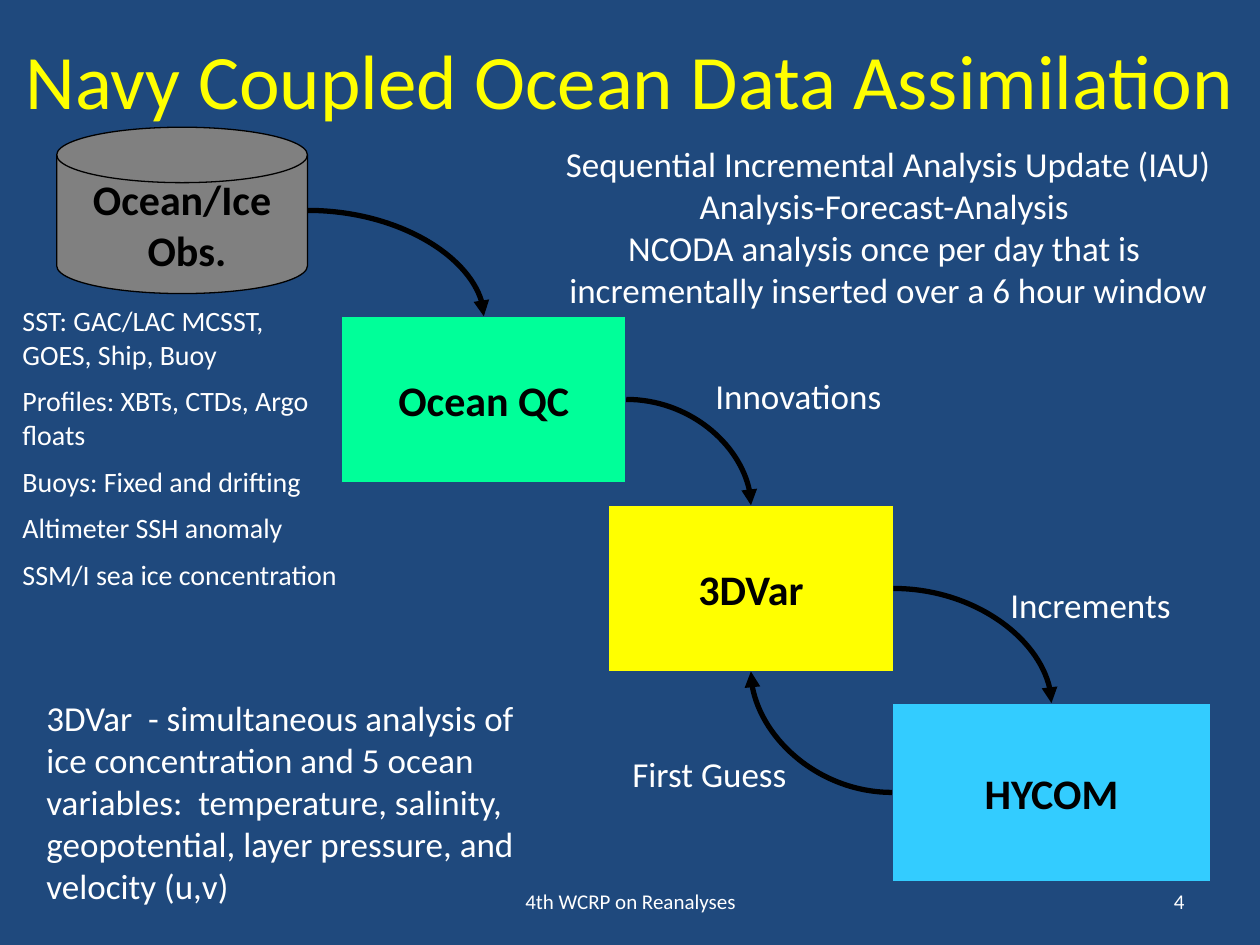
import pptx
import pptx.dml.color
import pptx.enum.shapes
import pptx.enum.text
import pptx.oxml.ns
import pptx.util
import lxml.etree

Inches = pptx.util.Inches
Pt = pptx.util.Pt
Shape = pptx.enum.shapes.MSO_SHAPE
Align = pptx.enum.text.PP_ALIGN
Anchor = pptx.enum.text.MSO_ANCHOR


def color(value):
    return pptx.dml.color.RGBColor.from_string(value)


def write(box, text, size=20, ink="FFFFFF", bold=False, align=Align.LEFT,
          anchor=Anchor.TOP, wrap=True, gap=0, tight=()):
    frame = box.text_frame
    frame.word_wrap = wrap
    frame.vertical_anchor = anchor
    for index, line in enumerate(text.split("\n")):
        para = frame.paragraphs[0] if index == 0 else frame.add_paragraph()
        para.alignment = align
        para.space_before = Pt(0 if index == 0 or index in tight else gap)
        span = para.add_run()
        span.text = line
        span.font.name = "Calibri"
        span.font.size = Pt(size)
        span.font.bold = bold
        span.font.color.rgb = color(ink)


deck = pptx.Presentation()
deck.slide_width = Inches(10)
deck.slide_height = Inches(7.5)
page = deck.slides.add_slide(deck.slide_layouts[6])
page.background.fill.solid()
page.background.fill.fore_color.rgb = color("1F497D")

steps = {}
for name, kind, place, fill, edge in [
    ("HYCOM", Shape.RECTANGLE, (7.08, 5.58, 2.53, 1.42), "33CCFF", "1F497D"),
    ("Ocean QC", Shape.RECTANGLE, (2.71, 2.51, 2.26, 1.32), "00FF99", "1F497D"),
    ("3DVar", Shape.RECTANGLE, (4.83, 4.01, 2.26, 1.32), "FFFF00", "1F497D"),
    ("Ocean/Ice\n Obs.", Shape.FLOWCHART_MAGNETIC_DISK, (0.45, 1.01, 1.99, 1.32), "808080", "000000"),
]:
    step = page.shapes.add_shape(kind, *map(Inches, place))
    step.shadow.inherit = False
    step.fill.solid()
    step.fill.fore_color.rgb = color(fill)
    step.line.color.rgb = color(edge)
    step.line.width = Pt(0.75)
    write(step, name, size=24, ink="000000", bold=True, align=Align.CENTER,
          anchor=Anchor.MIDDLE, wrap=False)
    steps[name.split("\n")[0]] = step

for source, target, forward in [
    ("Ocean/Ice", "Ocean QC", True),
    ("Ocean QC", "3DVar", True),
    ("3DVar", "HYCOM", True),
    ("HYCOM", "3DVar", False),
]:
    start, end = steps[source], steps[target]
    arrow = page.shapes.add_connector(
        pptx.enum.shapes.MSO_CONNECTOR.CURVE,
        start.left + (start.width if forward else 0),
        start.top + start.height // 2,
        end.left + end.width // 2,
        end.top + (0 if forward else end.height),
    )
    arrow.line.color.rgb = color("000000")
    arrow.line.width = Pt(3)
    props = arrow._element.spPr
    props.find(pptx.oxml.ns.qn("a:prstGeom")).set("prst", "curvedConnector2")
    lxml.etree.SubElement(arrow.line._get_or_add_ln(), pptx.oxml.ns.qn("a:tailEnd"), type="triangle")
    lxml.etree.SubElement(props, pptx.oxml.ns.qn("a:effectLst"))

update_text = """Sequential Incremental Analysis Update (IAU)
Analysis-Forecast-Analysis 
NCODA analysis once per day that is 
incrementally inserted over a 6 hour window"""

variables_text = """3DVar  - simultaneous analysis of
ice concentration and 5 ocean
variables:  temperature, salinity,
geopotential, layer pressure, and
velocity (u,v)"""

sources_text = """SST: GAC/LAC MCSST,
GOES, Ship, Buoy
Profiles: XBTs, CTDs, Argo floats
Buoys: Fixed and drifting
Altimeter SSH anomaly
SSM/I sea ice concentration"""

middle = {"anchor": Anchor.MIDDLE}
for text, place, style in [
    ("Navy Coupled Ocean Data Assimilation", (0, 0, 10, 1.25),
     {"size": 44, "ink": "FFFF00", "align": Align.CENTER, **middle}),
    (update_text, (4.25, 1.08, 5.6, 1.45), {"align": Align.CENTER}),
    (variables_text, (0.27, 5.48, 4.61, 1.78), {}),
    (sources_text, (0.08, 2.36, 2.78, 3.03), {"size": 16, "gap": 7.5, "tight": (1,)}),
    ("Innovations", (5.58, 2.92, 2.17, 0.49), {}),
    ("Increments", (7.92, 4.58, 2.08, 0.49), {}),
    ("First Guess", (4.92, 5.92, 1.99, 0.49), {}),
    ("4th WCRP on Reanalyses", (3.42, 6.95, 3.17, 0.4),
     {"size": 12, "align": Align.CENTER, **middle}),
    ("4", (7.17, 6.95, 2.33, 0.4), {"size": 12, "align": Align.RIGHT, **middle}),
]:
    box = page.shapes.add_textbox(*map(Inches, place))
    write(box, text, **style)

deck.save("out.pptx")
